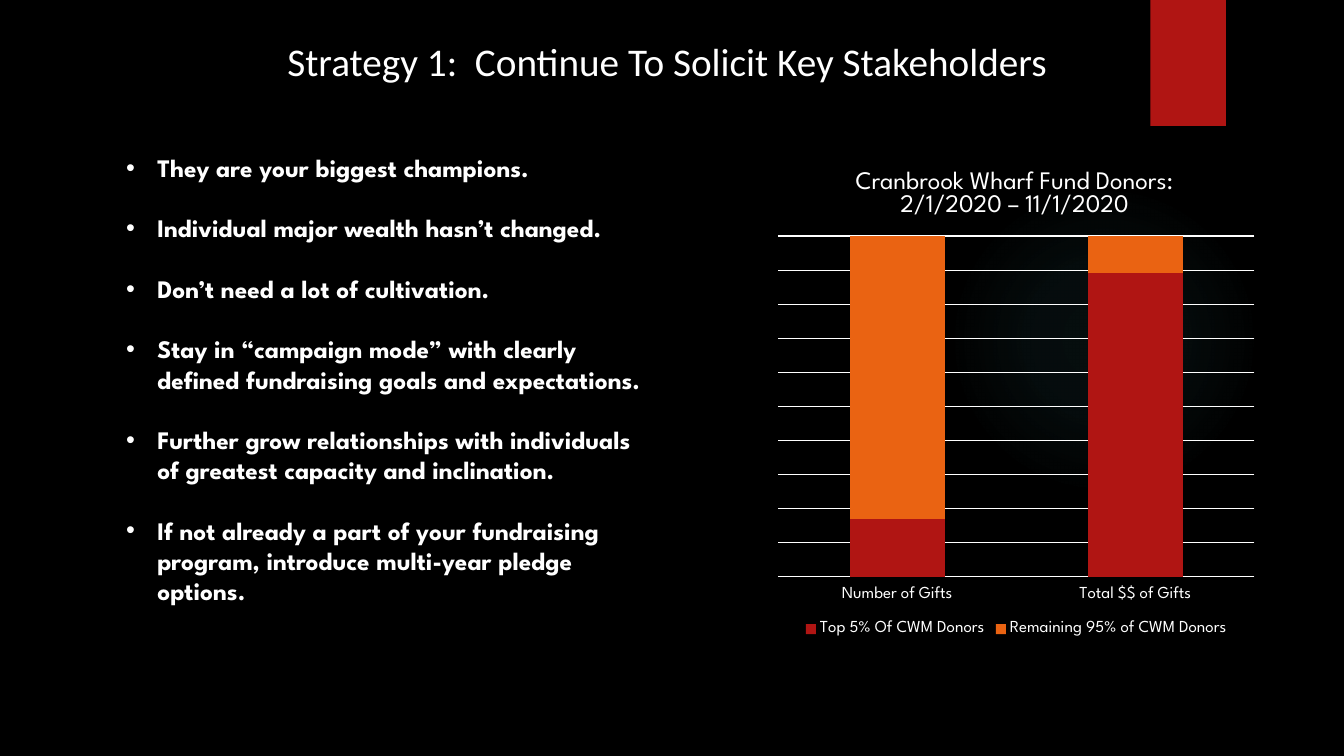
from lxml import etree
from pptx import Presentation
from pptx.chart.data import CategoryChartData
from pptx.dml.color import RGBColor
from pptx.enum.chart import XL_CHART_TYPE as ChartType, XL_LEGEND_POSITION as LegendPosition
from pptx.enum.chart import XL_TICK_LABEL_POSITION as LabelPosition, XL_TICK_MARK as TickMark
from pptx.enum.shapes import MSO_SHAPE as Preset
from pptx.enum.text import MSO_ANCHOR as Anchor, MSO_AUTO_SIZE as AutoSize, PP_ALIGN as Align
from pptx.oxml import parse_xml
from pptx.oxml.ns import nsdecls, qn
from pptx.util import Inches, Pt

COLORS = {"back": "000000", "text": "FFFFFF", "red": "B01513",
          "orange": "EA6312", "glow": "50B9C1"}
HEADING_FONT, BODY_FONT = "Calibri", "League Spartan"


def rgb(name):
    return RGBColor.from_string(COLORS[name])


def style_font(font, size, name=BODY_FONT, bold=False):
    values = {"name": name, "size": Pt(size), "bold": bold}
    for key, value in values.items():
        setattr(font, key, value)
    font.color.rgb = rgb("text")


deck = Presentation()
deck.slide_width, deck.slide_height = Inches(13.33), Inches(7.5)
page = deck.slides.add_slide(deck.slide_layouts[1])
page.background.fill.solid()
page.background.fill.fore_color.rgb = rgb("back")

# Soft glow behind the chart
glow = page.shapes.add_shape(Preset.OVAL, Inches(9.41), Inches(1.83), Inches(3.08), Inches(3.08))
stops = "".join(
    f'<a:gs pos="{place * 1000}"><a:srgbClr val="{COLORS["glow"]}">'
    f'<a:alpha val="{alpha * 1000}"/></a:srgbClr></a:gs>'
    for place, alpha in [(0, 7), (36, 6), (69, 0), (100, 0)])
glow.element.spPr.find(qn("a:prstGeom")).addnext(parse_xml(
    f'<a:gradFill {nsdecls("a")}><a:gsLst>{stops}</a:gsLst><a:path path="circle">'
    '<a:fillToRect l="50000" t="50000" r="50000" b="50000"/></a:path></a:gradFill>'))

# Red ribbon at the top
ribbon = page.shapes.add_shape(Preset.RECTANGLE, Inches(11.41), 0, Inches(0.75), Inches(1.25))
ribbon.fill.solid()
ribbon.fill.fore_color.rgb = rgb("red")
for shape in (glow, ribbon):
    shape.line.fill.background()
    shape.shadow.inherit = False

# Title and body frames
title, body = page.shapes.title, page.placeholders[1]
for box, bounds, anchor in [(title, (2.75, 0.32, 7.83, 0.57), Anchor.MIDDLE),
                            (body, (0.65, 1.46, 5.91, 5.25), Anchor.TOP)]:
    box.left, box.top, box.width, box.height = [Inches(value) for value in bounds]
    frame_values = {"word_wrap": True, "auto_size": AutoSize.NONE, "vertical_anchor": anchor}
    for key, value in frame_values.items():
        setattr(box.text_frame, key, value)

title.text_frame.text = "Strategy 1:  Continue To Solicit Key Stakeholders"
heading = title.text_frame.paragraphs[0]
heading.alignment = Align.LEFT
style_font(heading.font, 28, HEADING_FONT)

# Bulleted reasons
reasons = [
    "They are your biggest champions.",
    "Individual major wealth hasn’t changed.",
    "Don’t need a lot of cultivation.",
    "Stay in “campaign mode” with clearly defined fundraising goals and expectations.",
    "Further grow relationships with individuals of greatest capacity and inclination.",
    "If not already a part of your fundraising program, introduce multi-year pledge options.",
]
body.text_frame.text = "\n".join(reasons)
for index, para in enumerate(body.text_frame.paragraphs):
    para.space_before = Pt(21.6 if index else 0)
    settings = para._p.get_or_add_pPr()
    settings.set("marL", str(Inches(0.81)))
    settings.set("indent", str(Inches(-0.31)))
    etree.SubElement(settings, qn("a:buFont")).set("typeface", "Arial")
    etree.SubElement(settings, qn("a:buChar")).set("char", "•")
    style_font(para.font, 18, bold=True)

# Donor chart
data = CategoryChartData(number_format="0")
data.categories = ["Number of Gifts", "Total $$ of Gifts"]
data.add_series("Top 5% Of CWM Donors", [17, 89])
data.add_series("Remaining 95% of CWM Donors", [83, 11])
chart = page.shapes.add_chart(ChartType.COLUMN_STACKED_100, Inches(7.62), Inches(1.46),
                              Inches(4.92), Inches(4.9), data).chart
style_font(chart.font, 10)

plot = chart.plots[0]
plot.gap_width, plot.overlap, plot.vary_by_categories = 150, 100, False
for series, color in zip(plot.series, ["red", "orange"]):
    series.format.fill.solid()
    series.format.fill.fore_color.rgb = rgb(color)

# Chart title
chart.has_title = True
chart.chart_title.include_in_layout = False
chart.chart_title.text_frame.text = "Cranbrook Wharf Fund Donors:\n2/1/2020 – 11/1/2020"
for para in chart.chart_title.text_frame.paragraphs:
    para.line_spacing = 0.9
    style_font(para.font, 18)

# Axes and legend
category_axis, value_axis = chart.category_axis, chart.value_axis
category_axis.major_tick_mark = TickMark.NONE
category_axis.tick_label_position = LabelPosition.LOW
category_axis.format.line.fill.background()
style_font(category_axis.tick_labels.font, 12)

axis_values = {"visible": False, "minimum_scale": 0, "maximum_scale": 1,
               "major_unit": 0.1, "has_major_gridlines": True}
for key, value in axis_values.items():
    setattr(value_axis, key, value)
grid_line = value_axis.major_gridlines.format.line
grid_line.color.rgb = rgb("text")
grid_line.width = Pt(0.75)

chart.has_legend = True
chart.legend.position = LegendPosition.BOTTOM
chart.legend.include_in_layout = False
style_font(chart.legend.font, 12)

# Fixed places for the chart title and the plot area
plot_area = chart._chartSpace.chart.plotArea
for old in plot_area.findall(qn("c:layout")):
    plot_area.remove(old)
title_element = chart.chart_title._element
for old in title_element.findall(qn("c:layout")):
    title_element.remove(old)
places = [(title_element, 1, "", {"x": 0.17, "y": 0.04}),
          (plot_area, 0, '<c:layoutTarget val="inner"/>',
           {"x": 0.02, "y": 0.18, "w": 0.96, "h": 0.69})]
for parent, position, target, sizes in places:
    modes = "".join(f'<c:{key}Mode val="edge"/>' for key in "xy")
    numbers = "".join(f'<c:{key} val="{value}"/>' for key, value in sizes.items())
    parent.insert(position, parse_xml(
        f'<c:layout {nsdecls("c")}><c:manualLayout>{target}{modes}{numbers}'
        '</c:manualLayout></c:layout>'))

deck.save("out.pptx")
